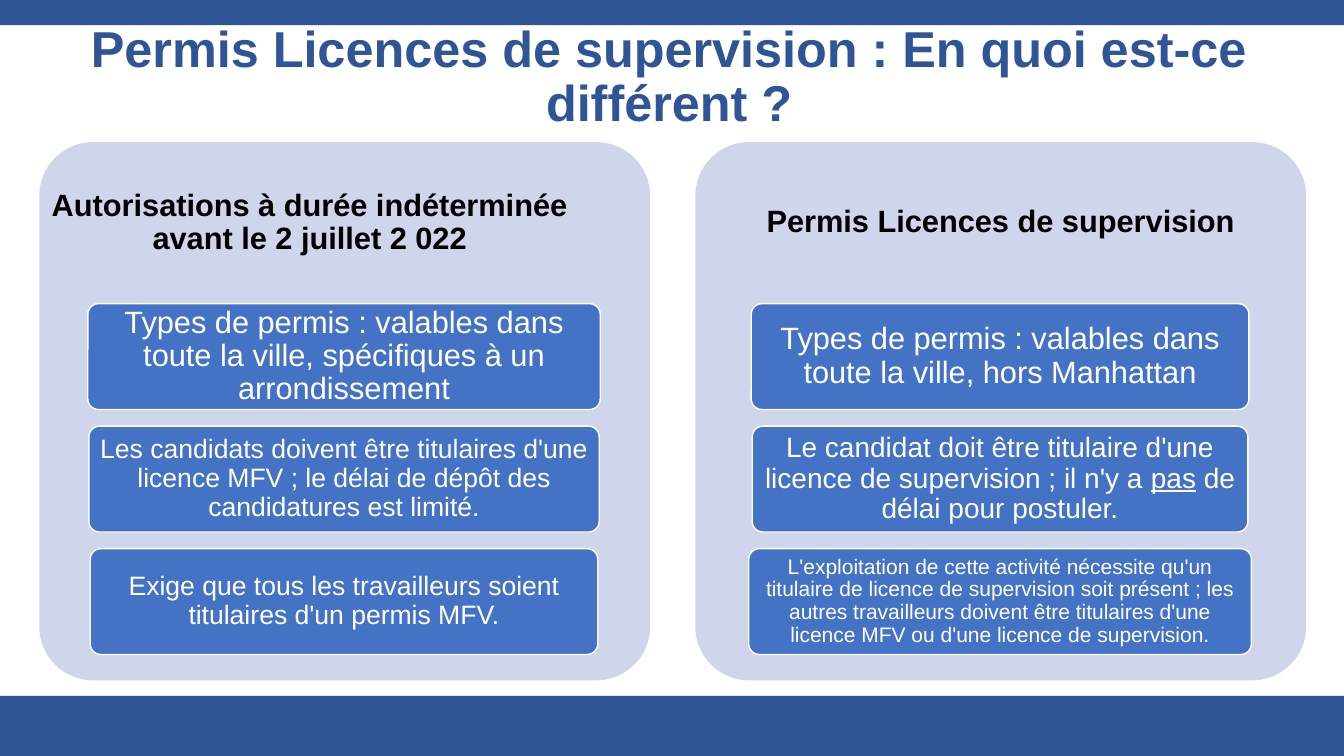
"""Build a slide comparing indefinite authorisations with supervision licences."""
from pptx import Presentation
from pptx.dml.color import RGBColor
from pptx.enum.shapes import MSO_SHAPE as Shape
from pptx.enum.text import MSO_ANCHOR as Anchor, PP_ALIGN as Align
from pptx.util import Pt

NAVY, BLUE, PALE, WHITE, BLACK = "2F5597", "4472C4", "CFD5EA", "FFFFFF", "000000"
SLIDE_WIDTH, SLIDE_HEIGHT = 960, 540
PANEL_TOP, PANEL_WIDTH, PANEL_HEIGHT = 101.5, 436.3, 384.5
HEADING_HEIGHT = 115.2
CARD_TOP, CARD_HEIGHT, CARD_STEP = 216.9, 75.6, 87.5

COLUMNS = [
    (28.1, ["Autorisations à durée indéterminée", "avant le 2 juillet 2 022"], 50, [
        (366, 22, "Types de permis : valables dans toute la ville, spécifiques à un arrondissement"),
        (364.5, 19, "Les candidats doivent être titulaires d'une licence MFV ; "
                    "le délai de dépôt des candidatures est limité."),
        (362.5, 19, "Exige que tous les travailleurs soient titulaires d'un permis MFV."),
    ]),
    (496.7, ["Permis Licences de supervision"], 0, [
        (355.5, 22, "Types de permis : valables dans toute la ville, hors Manhattan"),
        (354, 20, "Le candidat doit être titulaire d'une licence de supervision ; "
                  "il n'y a _pas_ de délai pour postuler."),
        (359, 15, "L'exploitation de cette activité nécessite qu'un titulaire de licence "
                  "de supervision soit présent ; les autres travailleurs doivent être "
                  "titulaires d'une licence MFV ou d'une licence de supervision."),
    ]),
]


def color(hex_code):
    """Turn a hex string into a colour."""
    return RGBColor.from_string(hex_code)


def write(frame, lines, size, ink, bold=False, sides=7.2, ends=3.6, first_indent=0):
    """Write centred paragraphs, underlining the parts between underscores."""
    frame.word_wrap = True
    frame.vertical_anchor = Anchor.MIDDLE
    frame.margin_left = frame.margin_right = Pt(sides)
    frame.margin_top = frame.margin_bottom = Pt(ends)
    for index, line in enumerate(lines):
        paragraph = frame.add_paragraph() if index else frame.paragraphs[0]
        paragraph.alignment = Align.CENTER
        paragraph.line_spacing = 0.9
        if first_indent and index == 0:
            paragraph._p.get_or_add_pPr().set("marR", str(Pt(first_indent)))
        for part, words in enumerate(line.split("_")):
            run = paragraph.add_run()
            run.text = words
            font = run.font
            font.name, font.size, font.bold = "Arial", Pt(size), bold
            font.color.rgb = color(ink)
            if part % 2:
                font.underline = True


class ComparisonSlide:
    """Hold the current slide and the style of its elements."""

    def __init__(self, slide):
        """Keep the slide to draw on."""
        self.shapes = slide.shapes

    def block(self, kind, left, top, width, height, fill, outline=None):
        """Add a filled preset shape."""
        block = self.shapes.add_shape(kind, Pt(left), Pt(top), Pt(width), Pt(height))
        block.shadow.inherit = False
        block.fill.solid()
        block.fill.fore_color.rgb = color(fill)
        if outline:
            block.line.color.rgb = color(outline)
            block.line.width = Pt(1)
        else:
            block.line.fill.background()
        if kind == Shape.ROUNDED_RECTANGLE:
            block.adjustments[0] = 0.1
        return block

    def band(self, top, height):
        """Add a band across the whole slide."""
        self.block(Shape.RECTANGLE, 0, top, SLIDE_WIDTH, height, NAVY)

    def label(self, left, top, width, height, lines, **style):
        """Add a text box."""
        label = self.shapes.add_textbox(Pt(left), Pt(top), Pt(width), Pt(height))
        write(label.text_frame, lines, **style)

    def card(self, center, top, width, size, text):
        """Add a card with its statement."""
        card = self.block(Shape.ROUNDED_RECTANGLE, center - width / 2, top, width,
                          CARD_HEIGHT, BLUE, WHITE)
        write(card.text_frame, [text], size, WHITE, sides=size * 0.19, ends=size * 0.14)

    def column(self, left, heading, indent, cards):
        """Add a panel with its heading and cards."""
        self.block(Shape.ROUNDED_RECTANGLE, left, PANEL_TOP, PANEL_WIDTH, PANEL_HEIGHT, PALE)
        self.label(left, PANEL_TOP, PANEL_WIDTH, HEADING_HEIGHT, heading, size=22,
                   ink=BLACK, bold=True, sides=6.6, ends=6.6, first_indent=indent)
        for row, (width, size, text) in enumerate(cards):
            self.card(left + PANEL_WIDTH / 2 - 0.5, CARD_TOP + row * CARD_STEP,
                      width, size, text)


def main():
    """Build and save the presentation."""
    deck = Presentation()
    deck.slide_width, deck.slide_height = Pt(SLIDE_WIDTH), Pt(SLIDE_HEIGHT)
    page = ComparisonSlide(deck.slides.add_slide(deck.slide_layouts[6]))
    page.band(0, 18)
    page.band(497, 43)
    page.label(9, 18, 938, 75.6,
               ["Permis Licences de supervision : En quoi est-ce différent ?"],
               size=36, ink=NAVY, bold=True)
    for column in COLUMNS:
        page.column(*column)
    deck.save("out.pptx")


if __name__ == "__main__":
    main()
